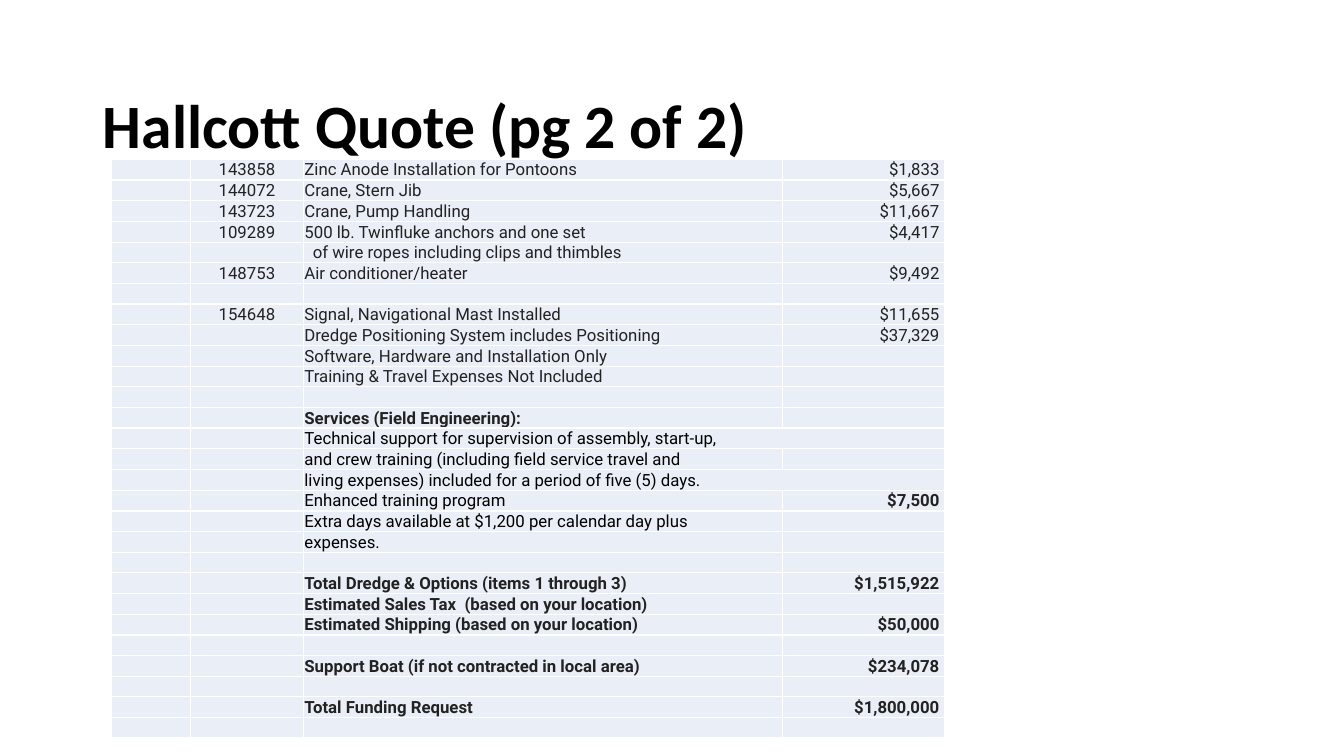
from lxml import etree
from pptx import Presentation
from pptx.dml.color import RGBColor
from pptx.enum.text import MSO_ANCHOR, PP_ALIGN
from pptx.oxml.ns import qn
from pptx.util import Inches, Pt

MIDDLE = MSO_ANCHOR.MIDDLE
LEFT, CENTER, RIGHT = PP_ALIGN.LEFT, PP_ALIGN.CENTER, PP_ALIGN.RIGHT

BLACK = RGBColor(0x00, 0x00, 0x00)
CHARCOAL = RGBColor(0x22, 0x22, 0x22)
PALE_BLUE = RGBColor(0xEA, 0xEF, 0xF7)
WHITE = RGBColor(0xFF, 0xFF, 0xFF)

# Content: part number, description, price, row style
TITLE = "Hallcott Quote (pg 2 of 2)"
OPTION, SERVICE, TOTAL = "option", "service", "total"
EMPTY = ("", "", "", OPTION)
QUOTE_ROWS = [
    ("143858", "Zinc Anode Installation for Pontoons", "$1,833", OPTION),
    ("144072", "Crane, Stern Jib", "$5,667", OPTION),
    ("143723", "Crane, Pump Handling", "$11,667", OPTION),
    ("109289", "500 lb. Twinfluke anchors and one set", "$4,417", OPTION),
    ("", "  of wire ropes including clips and thimbles", "", OPTION),
    ("148753", "Air conditioner/heater", "$9,492", OPTION),
    EMPTY,
    ("154648", "Signal, Navigational Mast Installed", "$11,655", OPTION),
    ("", "Dredge Positioning System includes Positioning", "$37,329", OPTION),
    ("", "Software, Hardware and Installation Only", "", OPTION),
    ("", "Training & Travel Expenses Not Included", "", OPTION),
    EMPTY,
    ("", "Services (Field Engineering):", "", TOTAL),
    ("", "Technical support for supervision of assembly, start-up,", "", SERVICE),
    ("", "and crew training (including field service travel and", "", SERVICE),
    ("", "living expenses) included for a period of five (5) days.", "", SERVICE),
    ("", "Enhanced training program", "$7,500", SERVICE),
    ("", "Extra days available at $1,200 per calendar day plus", "", SERVICE),
    ("", "expenses.", "", SERVICE),
    EMPTY,
    ("", "Total Dredge & Options (items 1 through 3)", "$1,515,922", TOTAL),
    ("", "Estimated Sales Tax  (based on your location)", "", TOTAL),
    ("", "Estimated Shipping (based on your location)", "$50,000", TOTAL),
    EMPTY,
    ("", "Support Boat (if not contracted in local area)", "$234,078", TOTAL),
    EMPTY,
    ("", "Total Funding Request", "$1,800,000", TOTAL),
    EMPTY,
]
WIDE_ROWS = (13, 15)  # description runs across the price column

# Layout in inches
TABLE_LEFT, TABLE_TOP, TABLE_HEIGHT = 1.1, 1.58, 5.69
COLUMN_WIDTHS = (0.79, 1.12, 4.75, 1.61)
PART, DESCRIPTION, PRICE = 1, 2, 3
ALIGNMENTS = {PART: CENTER, DESCRIPTION: LEFT, PRICE: RIGHT}


def format_cell(cell):
    """Give a cell its white borders, fill, margins and anchor."""
    properties = cell._tc.get_or_add_tcPr()
    for side in ("a:lnL", "a:lnR", "a:lnT", "a:lnB"):
        line = etree.SubElement(properties, qn(side), w=str(Pt(1)))
        line_fill = etree.SubElement(line, qn("a:solidFill"))
        etree.SubElement(line_fill, qn("a:srgbClr"), val=str(WHITE))
    cell.fill.solid()
    cell.fill.fore_color.rgb = PALE_BLUE
    cell.margin_left = cell.margin_right = cell.margin_top = Inches(0.01)
    cell.margin_bottom = 0
    cell.vertical_anchor = MIDDLE


def write_cell(cell, text, alignment, color, bold):
    paragraph = cell.text_frame.paragraphs[0]
    if not text:
        # A small end mark keeps empty rows from growing
        etree.SubElement(paragraph._p, qn("a:endParaRPr"), sz="1000")
        return
    paragraph.text = text
    paragraph.alignment = alignment
    font = paragraph.font
    font.name, font.size, font.bold = "Roboto", Pt(12), bold
    font.color.rgb = color


presentation = Presentation()
presentation.slide_width = Inches(13.33)
presentation.slide_height = Inches(7.5)
slide = presentation.slides.add_slide(presentation.slide_layouts[5])

# Title
title = slide.shapes.title
title.left, title.top = Inches(0.92), Inches(0.55)
title.width, title.height = Inches(11.5), Inches(1.45)
title.text_frame.text = TITLE
title.text_frame.vertical_anchor = MIDDLE
heading = title.text_frame.paragraphs[0]
heading.alignment = LEFT
heading.line_spacing = 0.9
heading.font.name, heading.font.size, heading.font.bold = "Calibri", Pt(44), True
heading.font.color.rgb = BLACK

# Quote table
table = slide.shapes.add_table(
    len(QUOTE_ROWS), len(COLUMN_WIDTHS), Inches(TABLE_LEFT), Inches(TABLE_TOP),
    Inches(sum(COLUMN_WIDTHS)), Inches(TABLE_HEIGHT)).table
table.first_row = table.horz_banding = False
for column, width in zip(table.columns, COLUMN_WIDTHS):
    column.width = Inches(width)

for row_index, (part, description, price, style) in enumerate(QUOTE_ROWS):
    texts = ("", part, description, f"{price} " if price else "")
    for column_index, text in enumerate(texts):
        cell = table.cell(row_index, column_index)
        format_cell(cell)
        is_price = column_index == PRICE
        color = BLACK if style == SERVICE and not is_price else CHARCOAL
        bold = style == TOTAL or (style == SERVICE and is_price)
        write_cell(cell, text, ALIGNMENTS.get(column_index), color, bold)

for row_index in WIDE_ROWS:
    table.cell(row_index, DESCRIPTION).merge(table.cell(row_index, PRICE))

presentation.save("out.pptx")
